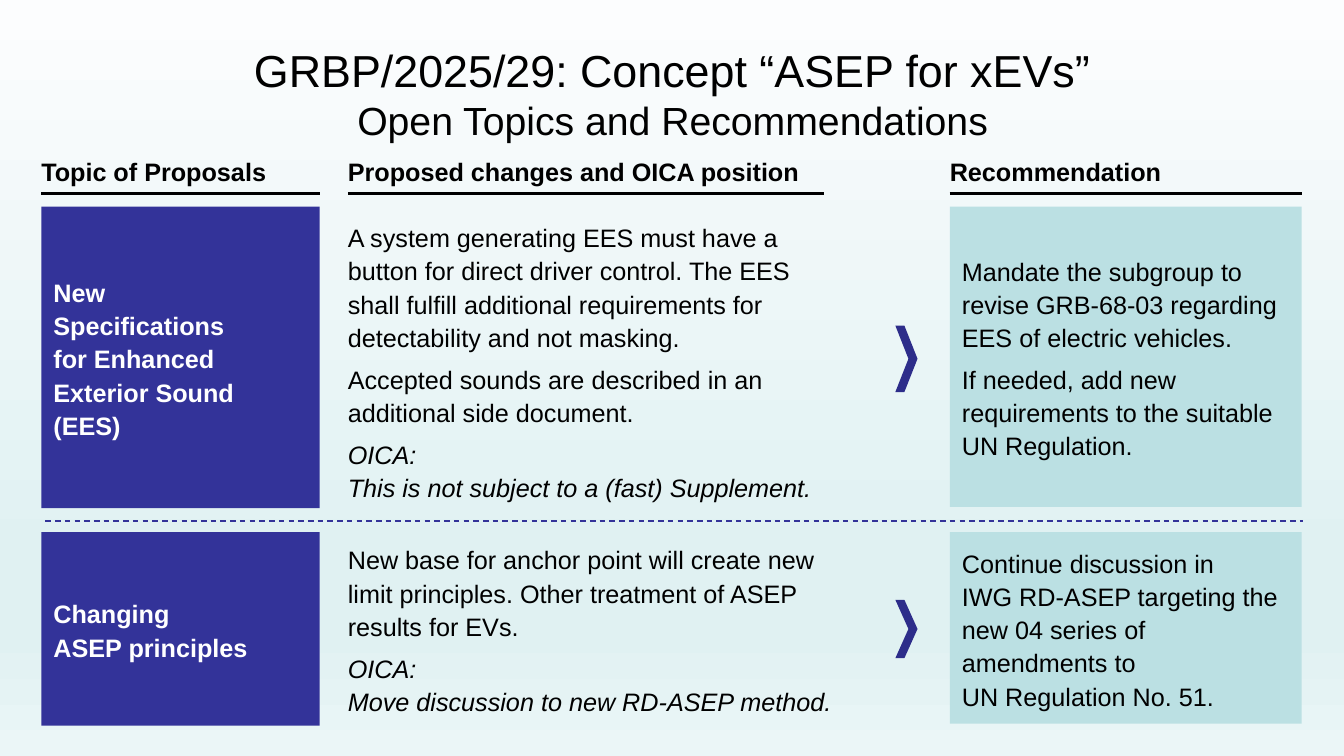
from dataclasses import dataclass

from lxml import etree
from pptx import Presentation
from pptx.dml.color import RGBColor
from pptx.enum.dml import MSO_LINE
from pptx.enum.shapes import MSO_CONNECTOR, MSO_SHAPE
from pptx.enum.text import MSO_ANCHOR, PP_ALIGN
from pptx.oxml.ns import qn
from pptx.util import Inches, Pt

STRAIGHT = MSO_CONNECTOR.STRAIGHT
RECTANGLE = MSO_SHAPE.RECTANGLE
DASH = MSO_LINE.DASH
TOP, MIDDLE = MSO_ANCHOR.TOP, MSO_ANCHOR.MIDDLE
LEFT, CENTER = PP_ALIGN.LEFT, PP_ALIGN.CENTER
TITLE_ONLY = 5


@dataclass(frozen=True)
class Theme:
    font: str = "Arial"
    title_size: int = 32
    subtitle_size: int = 28
    body_size: int = 18
    black: str = "000000"
    white: str = "FFFFFF"
    topic: str = "333399"
    chevron: str = "2D2D8A"
    recommendation: str = "BBE0E3"
    background: tuple = ((0, "FCFDFE"), (74, "E0F1F2"), (83, "E0F1F2"), (100, "EBF6F7"))


THEME = Theme()
TOPIC_LEFT, TOPIC_WIDTH = 0.41, 2.76
POSITION_LEFT = 3.45
CHEVRON_LEFT = 8.88
RECOMMENDATION_LEFT, RECOMMENDATION_WIDTH = 9.42, 3.49

HEADINGS = (
    ("Topic of Proposals", TOPIC_LEFT, TOPIC_WIDTH),
    ("Proposed changes and OICA position", POSITION_LEFT, 4.72),
    ("Recommendation", RECOMMENDATION_LEFT, RECOMMENDATION_WIDTH),
)

ROWS = (
    dict(
        top=2.05, height=2.99, position_top=2.12, position_width=4.95,
        recommendation_height=2.98, chevron_top=3.23, chevron_height=0.66,
        topic="New\vSpecifications\vfor Enhanced Exterior Sound (EES)",
        changes=(
            "A system generating EES must have a button for direct driver control. "
            "The EES shall fulfill additional requirements for detectability and not masking.",
            "Accepted sounds are described in an additional side document.",
        ),
        opinion="OICA:\vThis is not subject to a (fast) Supplement.",
        recommendations=(
            "Mandate the subgroup to revise GRB-68-03 regarding EES of electric vehicles.",
            "If needed, add new requirements to the suitable UN Regulation.",
        ),
    ),
    dict(
        top=5.28, height=1.92, position_top=5.28, position_width=5.11,
        recommendation_height=1.9, chevron_top=5.95, chevron_height=0.58,
        topic="Changing\vASEP principles",
        changes=(
            "New base for anchor point will create new limit principles. "
            "Other treatment of ASEP results for EVs.",
        ),
        opinion="OICA:\vMove discussion to new RD-ASEP method.",
        recommendations=(
            "Continue discussion in\vIWG RD-ASEP targeting the new 04 series of "
            "amendments to\vUN Regulation No. 51.",
        ),
    ),
)


def color(value):
    return RGBColor.from_string(value)


def set_background(slide):
    fill = slide.background.fill
    fill.gradient()
    fill.gradient_angle = 270
    stops = slide.background._cSld.find(".//" + qn("a:gsLst"))
    for stop in list(stops):
        stops.remove(stop)
    for percent, value in THEME.background:
        stop = etree.SubElement(stops, qn("a:gs"), pos=str(percent * 1000))
        etree.SubElement(stop, qn("a:srgbClr"), val=value)


def add_title(slide, heading, subheading):
    title = slide.shapes.title
    title.left, title.top = Inches(0.67), Inches(0.3)
    title.width, title.height = Inches(12), Inches(1.25)
    title.text_frame.vertical_anchor = MIDDLE
    paragraph = title.text_frame.paragraphs[0]
    paragraph.alignment = CENTER
    for text, size in ((heading, THEME.title_size), (subheading, THEME.subtitle_size)):
        if paragraph.runs:
            paragraph.add_line_break()
        run = paragraph.add_run()
        run.text = text
        run.font.name = THEME.font
        run.font.size = Pt(size)
        run.font.color.rgb = color(THEME.black)


def write_text(shape, texts, text_color=THEME.black, bold=False, italic_last=False,
               inset=(0, 0), anchor=MIDDLE, line_spacing=1.1):
    frame = shape.text_frame
    frame.word_wrap = True
    frame.vertical_anchor = anchor
    frame.margin_left = frame.margin_right = Inches(inset[0])
    frame.margin_top = frame.margin_bottom = Inches(inset[1])
    for index, text in enumerate(texts):
        paragraph = frame.add_paragraph() if index else frame.paragraphs[0]
        paragraph.text = text
        paragraph.alignment = LEFT
        paragraph.line_spacing = line_spacing
        paragraph.space_before = Pt(6 if index else 0)
        font = paragraph.font
        font.name = THEME.font
        font.size = Pt(THEME.body_size)
        font.color.rgb = color(text_color)
        font.bold = bold
        font.italic = italic_last and index == len(texts) - 1


def add_text(slide, left, top, width, height, texts, **style):
    box = slide.shapes.add_textbox(Inches(left), Inches(top), Inches(width), Inches(height))
    write_text(box, texts, **style)


def paint(shape, fill_color):
    shape.shadow.inherit = False
    shape.fill.solid()
    shape.fill.fore_color.rgb = color(fill_color)
    shape.line.fill.background()


def add_card(slide, left, top, width, height, fill_color, texts, **style):
    card = slide.shapes.add_shape(
        RECTANGLE, Inches(left), Inches(top), Inches(width), Inches(height))
    paint(card, fill_color)
    write_text(card, texts, inset=(0.12, 0.08), **style)


def add_chevron(slide, left, top, height):
    middle, bottom = top + height / 2, top + height
    outline = ((left + 0.09, top), (left + 0.22, middle), (left + 0.09, bottom),
               (left, bottom), (left + 0.13, middle))
    builder = slide.shapes.build_freeform(Inches(left), Inches(top))
    builder.add_line_segments([(Inches(x), Inches(y)) for x, y in outline])
    paint(builder.convert_to_shape(), THEME.chevron)


def add_rule(slide, left, right, y, line_color, width, dash=None):
    rule = slide.shapes.add_connector(
        STRAIGHT, Inches(left), Inches(y), Inches(right), Inches(y))
    rule.line.color.rgb = color(line_color)
    rule.line.width = Pt(width)
    if dash:
        rule.line.dash_style = dash
    etree.SubElement(rule._element.spPr, qn("a:effectLst"))


def add_heading(slide, text, left, width):
    add_text(slide, left, 1.55, width, 0.31, (text,), bold=True, anchor=TOP, line_spacing=1)
    add_rule(slide, left, left + width, 1.92, THEME.black, 2)


def add_row(slide, row):
    add_card(slide, TOPIC_LEFT, row["top"], TOPIC_WIDTH, row["height"], THEME.topic,
             (row["topic"],), text_color=THEME.white, bold=True)
    add_text(slide, POSITION_LEFT, row["position_top"], row["position_width"],
             row["top"] + row["height"] - row["position_top"],
             row["changes"] + (row["opinion"],), italic_last=True)
    add_chevron(slide, CHEVRON_LEFT, row["chevron_top"], row["chevron_height"])
    add_card(slide, RECOMMENDATION_LEFT, row["top"], RECOMMENDATION_WIDTH,
             row["recommendation_height"], THEME.recommendation, row["recommendations"])


def main():
    presentation = Presentation()
    presentation.slide_width, presentation.slide_height = Inches(13.33), Inches(7.5)
    slide = presentation.slides.add_slide(presentation.slide_layouts[TITLE_ONLY])
    set_background(slide)
    add_title(slide, "GRBP/2025/29: Concept “ASEP for xEVs”",
              "Open Topics and Recommendations")
    for heading in HEADINGS:
        add_heading(slide, *heading)
    for row in ROWS:
        add_row(slide, row)
    add_rule(slide, 0.45, 12.92, 5.17, THEME.topic, 1, DASH)
    presentation.save("out.pptx")


if __name__ == "__main__":
    main()
